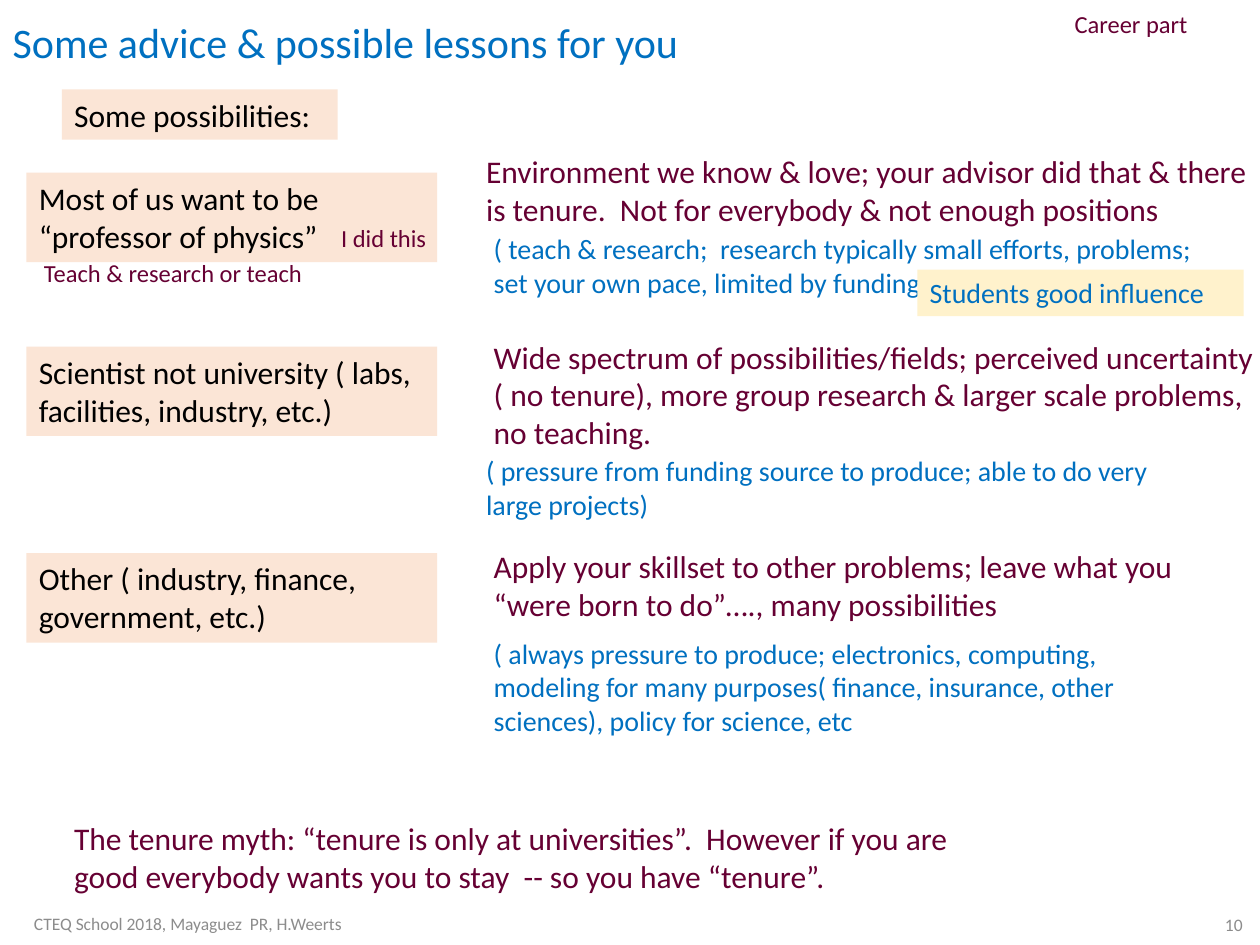
from pptx import Presentation
from pptx.dml.color import RGBColor
from pptx.enum.shapes import MSO_SHAPE
from pptx.enum.text import MSO_ANCHOR, MSO_AUTO_SIZE, PP_ALIGN
from pptx.util import Inches, Pt

COLORS = {
    "black": "000000",
    "blue": "0070C0",
    "wine": "660033",
    "gray": "8C8C8C",
    "peach": "FBE5D6",
    "cream": "FFF2CC",
}
FONT = "Calibri"
COLUMNS, ROWS = 100, 75
TITLE_ONLY = 5


class AdviceSlide:
    """Places elements on a grid of COLUMNS by ROWS cells."""

    def __init__(self, deck):
        self.column = deck.slide_width / COLUMNS
        self.row = deck.slide_height / ROWS
        self.slide = deck.slides.add_slide(deck.slide_layouts[TITLE_ONLY])

    def area(self, left, top, width, height):
        return (round(left * self.column), round(top * self.row),
                round(width * self.column), round(height * self.row))

    def set_text(self, holder, text, size, color,
                 align=PP_ALIGN.LEFT, anchor=MSO_ANCHOR.TOP):
        frame = holder.text_frame
        frame.word_wrap = True
        frame.auto_size = MSO_AUTO_SIZE.NONE
        frame.vertical_anchor = anchor
        paragraph = frame.paragraphs[0]
        paragraph.alignment = align
        run = paragraph.add_run()
        run.text = text
        run.font.name = FONT
        run.font.size = Pt(size)
        run.font.color.rgb = RGBColor.from_string(COLORS[color])
        return paragraph

    def title(self, text, *place):
        heading = self.slide.shapes.title
        heading.left, heading.top, heading.width, heading.height = self.area(*place)
        paragraph = self.set_text(heading, text, 24, "blue", anchor=MSO_ANCHOR.MIDDLE)
        paragraph.line_spacing = 0.9

    def text(self, text, *place, size=18, color="wine", **layout):
        box = self.slide.shapes.add_textbox(*self.area(*place))
        self.set_text(box, text, size, color, **layout)

    def panel(self, text, *place, fill="peach", size=18, color="black"):
        box = self.slide.shapes.add_shape(MSO_SHAPE.RECTANGLE, *self.area(*place))
        box.shadow.inherit = False
        box.fill.solid()
        box.fill.fore_color.rgb = RGBColor.from_string(COLORS[fill])
        box.line.fill.background()
        self.set_text(box, text, size, color)

    def footer(self, text, *place, align):
        self.text(text, *place, size=10, color="gray",
                  align=align, anchor=MSO_ANCHOR.MIDDLE)


# Each career: (name, row), (outlook, column, row, rows), (remark, column, row, columns, rows)
CAREERS = [
    (("Most of us want to be “professor of physics”", 13.7),
     ("Environment we know & love; your advisor did that & there is tenure.  "
      "Not for everybody & not enough positions", 37.6, 11.6, 7.1),
     ("( teach & research;  research typically small efforts, problems; "
      "set your own pace, limited by funding)", 38.2, 17.9, 60.5, 6.4)),
    (("Scientist not university ( labs, facilities, industry, etc.)", 27.5),
     ("Wide spectrum of possibilities/fields; perceived uncertainty "
      "( no tenure), more group research & larger scale problems, no teaching.",
      38.2, 26.3, 10.1),
     ("( pressure from funding source to produce; able to do very large projects)",
      37.6, 35.5, 55, 6.4)),
    (("Other ( industry, finance, government, etc.)", 43.9),
     ("Apply your skillset to other problems; leave what you "
      "“were born to do”…., many possibilities", 38.2, 42.9, 7.1),
     ("( always pressure to produce; electronics, computing, modeling for many "
      "purposes( finance, insurance, other sciences), policy for science, etc",
      38.2, 50, 55, 9.1)),
]


def main():
    deck = Presentation()
    deck.slide_width, deck.slide_height = Inches(10), Inches(7.5)
    advice = AdviceSlide(deck)

    advice.title("Some advice & possible lessons for you", 0, 0, 86.2, 7.1)
    advice.footer("CTEQ School 2018, Mayaguez  PR, H.Weerts",
                  0, 71.6, 29.8, 3.4, align=PP_ALIGN.CENTER)
    advice.footer("10", 92.7, 71.8, 6.9, 3.2, align=PP_ALIGN.RIGHT)
    advice.text("Career part", 84.3, 0.2, 15.7, 3.4, size=14)
    advice.panel("Some possibilities:", 4.9, 7.1, 21.9, 4)

    for (name, name_row), (outlook, column, row, rows), (remark, *place) in CAREERS:
        advice.panel(name, 2.1, name_row, 32.6, 7.1)
        advice.text(outlook, column, row, 62.4, rows)
        advice.text(remark, *place, size=16, color="blue")

    advice.text("The tenure myth: “tenure is only at universities”.  However if you are "
                "good everybody wants you to stay  -- so you have “tenure”.",
                4.9, 64.5, 75.7, 7.1)
    advice.text("I did this", 26.1, 17.2, 15.7, 3.4, size=14)
    advice.text("Teach & research or teach", 2.5, 20, 24.9, 3.4, size=14)
    advice.panel("Students good influence", 72.8, 21.4, 25.9, 3.7,
                 fill="cream", size=16, color="blue")

    deck.save("out.pptx")


if __name__ == "__main__":
    main()
